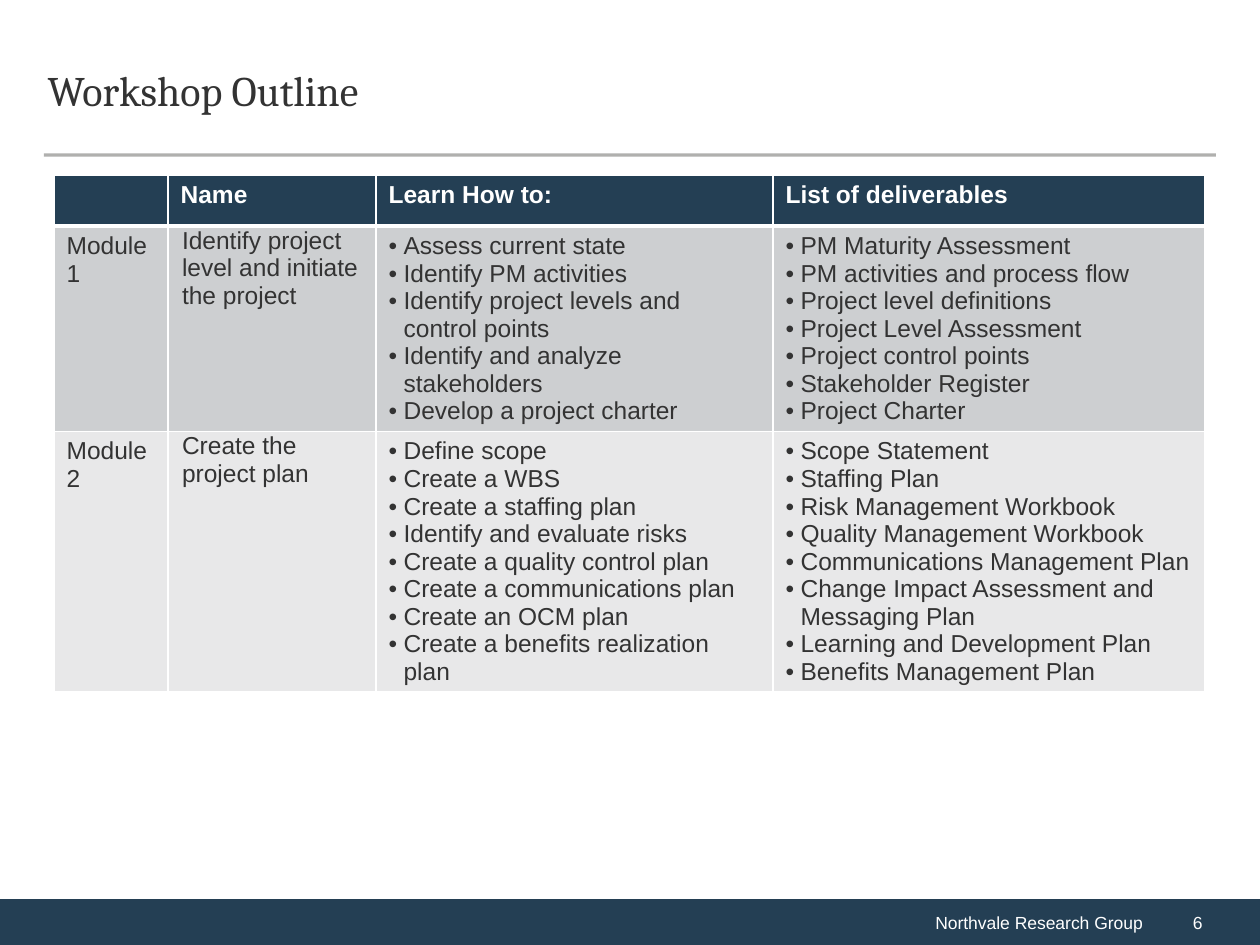
from lxml.etree import SubElement
from pptx import Presentation
from pptx.dml.color import RGBColor
from pptx.enum.shapes import MSO_CONNECTOR, MSO_SHAPE
from pptx.enum.text import MSO_ANCHOR, PP_ALIGN
from pptx.oxml import parse_xml
from pptx.oxml.ns import nsdecls, qn
from pptx.util import Emu, Pt

NAVY, WHITE, INK, RULE = "243F54", "FFFFFF", "333333", "45433E"
BANDS = ["CDCFD1", "E8E8E9"]
COLUMNS = [114, 208, 397, 432]
ROWS = [51, 205, 260]
HEADINGS = ["", "Name", "Learn How to:", "List of deliverables"]
MODULES = [
    ("Module 1", "Identify project level and initiate the project",
     ["Assess current state", "Identify PM activities",
      "Identify project levels and control points",
      "Identify and analyze stakeholders", "Develop a project charter"],
     ["PM Maturity Assessment", "PM activities and process flow",
      "Project level definitions", "Project Level Assessment",
      "Project control points", "Stakeholder Register", "Project Charter"]),
    ("Module 2", "Create the project plan",
     ["Define scope", "Create a WBS", "Create a staffing plan",
      "Identify and evaluate risks", "Create a quality control plan",
      "Create a communications plan", "Create an OCM plan",
      "Create a benefits realization plan"],
     ["Scope Statement", "Staffing Plan", "Risk Management Workbook",
      "Quality Management Workbook", "Communications Management Plan",
      "Change Impact Assessment and Messaging Plan",
      "Learning and Development Plan", "Benefits Management Plan"]),
]


def px(n):
    return Emu(round(n * 914400 / 126))


def rgb(value):
    return RGBColor.from_string(value)


def write(p, text, font="Arial", size=14, color=INK, bold=False,
          align=PP_ALIGN.LEFT, spacing=None, bullet=False):
    """Add one formatted run of text to a paragraph."""
    p.alignment = align
    if spacing:
        p.line_spacing = Pt(spacing)
    if bullet:
        pPr = p._p.get_or_add_pPr()
        pPr.set("marL", str(px(15)))
        pPr.set("indent", str(-px(15)))
        SubElement(pPr, qn("a:buFont"), typeface="Arial")
        SubElement(pPr, qn("a:buChar"), char="•")
    r = p.add_run()
    r.text = text
    r.font.name, r.font.size, r.font.bold = font, Pt(size), bold
    r.font.color.rgb = rgb(color)


class Deck:
    """Hold the presentation and the current slide."""

    def __init__(self, width, height):
        self.prs = Presentation()
        self.prs.slide_width, self.prs.slide_height = px(width), px(height)
        self.s = self.prs.slides.add_slide(self.prs.slide_layouts[5])

    def title(self, text, x, y, w, h):
        sp = self.s.shapes.title
        sp.left, sp.top, sp.width, sp.height = map(px, (x, y, w, h))
        tf = sp.text_frame
        tf.word_wrap, tf.vertical_anchor = True, MSO_ANCHOR.MIDDLE
        write(tf.paragraphs[0], text, font="Cambria", size=24, spacing=26)

    def bar(self, text, x, y, w, h, inset=13, **style):
        sp = self.s.shapes.add_shape(MSO_SHAPE.RECTANGLE, *map(px, (x, y, w, h)))
        sp.shadow.inherit = False
        sp.fill.solid()
        sp.fill.fore_color.rgb = rgb(NAVY)
        sp.line.fill.background()
        tf = sp.text_frame
        tf.margin_left, tf.vertical_anchor = px(inset), MSO_ANCHOR.MIDDLE
        write(tf.paragraphs[0], text, size=10, color=WHITE, **style)

    def rule(self, x1, x2, y):
        line = self.s.shapes.add_connector(
            MSO_CONNECTOR.STRAIGHT, px(x1), px(y), px(x2), px(y))
        line.line.width = Pt(1.75)
        line.line.color.rgb = rgb(RULE)
        SubElement(line._element.spPr, qn("a:effectLst"))
        color = line._element.spPr.find(".//" + qn("a:srgbClr"))
        SubElement(color, qn("a:alpha"), val="42000")

    def table(self, x, y, columns, rows):
        frame = self.s.shapes.add_table(
            len(rows), len(columns), px(x), px(y), px(sum(columns)), px(sum(rows)))
        for column, w in zip(frame.table.columns, columns):
            column.width = px(w)
        for row, h in zip(frame.table.rows, rows):
            row.height = px(h)
        return frame.table

    def cell(self, cell, content, fill, top=1, bottom=1, tight=False, **style):
        cell.fill.solid()
        cell.fill.fore_color.rgb = rgb(fill)
        cell.vertical_anchor = MSO_ANCHOR.TOP
        if tight:
            cell.margin_left, cell.margin_right = px(14), px(1)
            cell.margin_top, cell.margin_bottom = px(1), 0
        tcPr = cell._tc.get_or_add_tcPr()
        for i, (side, width) in enumerate(zip("LRTB", (1, 1, top, bottom))):
            tcPr.insert(i, parse_xml(
                f'<a:ln{side} {nsdecls("a")} w="{Pt(width)}"><a:solidFill>'
                f'<a:srgbClr val="{WHITE}"/></a:solidFill></a:ln{side}>'))
        bullet = isinstance(content, list)
        tf = cell.text_frame
        for i, text in enumerate(content if bullet else [content]):
            p = tf.add_paragraph() if i else tf.paragraphs[0]
            write(p, text, bullet=bullet, **style)


def main():
    deck = Deck(1260, 945)
    deck.bar("Northvale Research Group", 0, 899, 1155, 46, align=PP_ALIGN.RIGHT)
    deck.bar("6", 1155, 899, 105, 46, inset=38)
    deck.rule(44, 1216, 155)
    deck.title("Workshop Outline", 35, 37, 1188, 110)
    table = deck.table(54, 175, COLUMNS, ROWS)
    for c, heading in enumerate(HEADINGS):
        deck.cell(table.cell(0, c), heading, NAVY, bottom=3, color=WHITE, bold=True)
    for r, (module, fill) in enumerate(zip(MODULES, BANDS), 1):
        for c, content in enumerate(module):
            deck.cell(table.cell(r, c), content, fill,
                      top=3 if r == 1 else 1, tight=c == 1)
    deck.prs.save("out.pptx")


if __name__ == "__main__":
    main()
